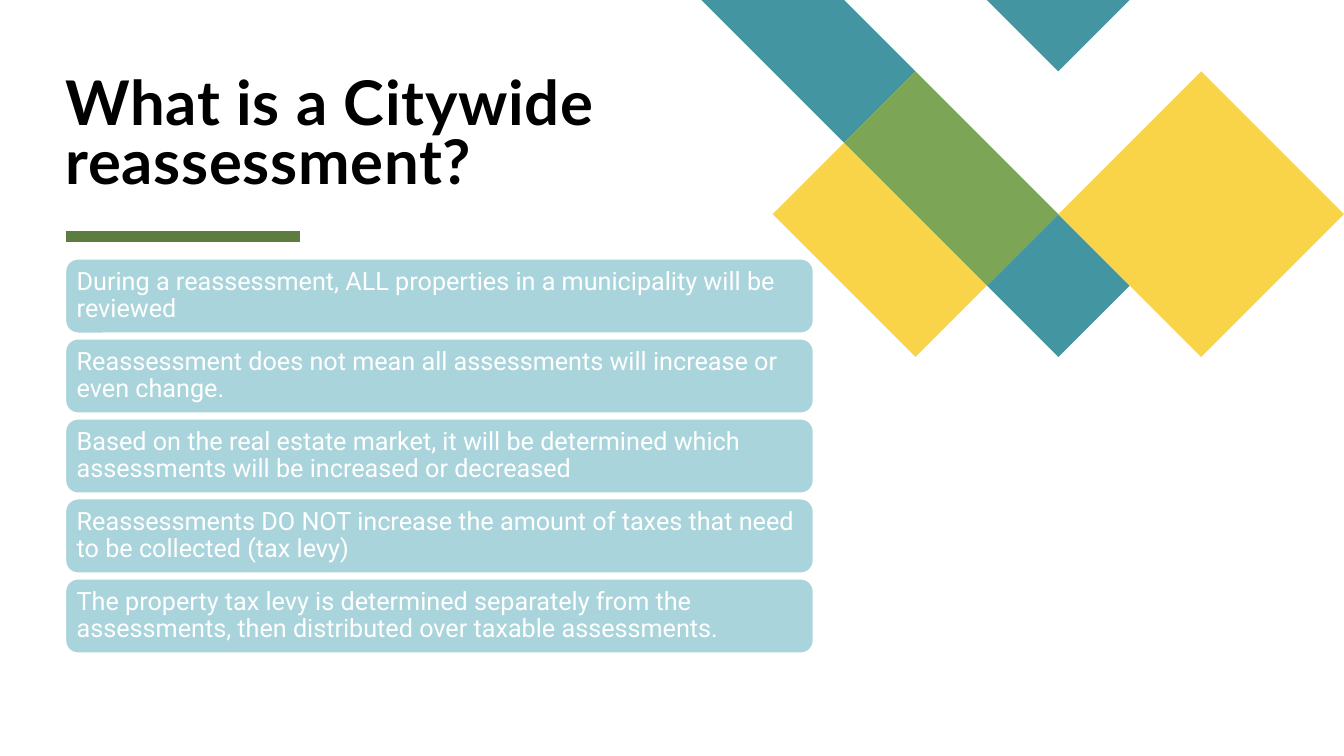
from dataclasses import dataclass

from lxml.etree import SubElement
from pptx import Presentation
from pptx.dml.color import RGBColor
from pptx.enum.shapes import MSO_CONNECTOR, MSO_SHAPE
from pptx.enum.text import MSO_ANCHOR, PP_ALIGN
from pptx.oxml.ns import qn
from pptx.shapes.base import BaseShape
from pptx.slide import Slide
from pptx.util import Pt

BLACK = RGBColor(0x00, 0x00, 0x00)
WHITE = RGBColor(0xFF, 0xFF, 0xFF)
TEAL = RGBColor(0x44, 0x95, 0xA2)
YELLOW = RGBColor(0xF9, 0xD4, 0x48)
GREEN = RGBColor(0x7C, 0xA6, 0x55)
DARK_GREEN = RGBColor(0x5D, 0x7D, 0x40)
PALE_TEAL = RGBColor(0xA9, 0xD4, 0xDB)

LATTICE_LEFT = 501
LATTICE_STEP = 51
CONTENT_LEFT = 46.8
CONTENT_WIDTH = 534.2
CARD_TOP = 184.9
CARD_HEIGHT = 53.1
CARD_PITCH = 57.13


@dataclass(frozen=True)
class Tile:
    color: RGBColor
    corners: tuple[tuple[int, int], ...]


TILES = (
    Tile(TEAL, ((0, 0), (2, 0), (3, 1), (2, 2))),
    Tile(TEAL, ((5, 3), (6, 4), (5, 5), (4, 4))),
    Tile(YELLOW, ((2, 2), (1, 3), (3, 5), (4, 4))),
    Tile(TEAL, ((4, 0), (6, 0), (5, 1))),
    Tile(GREEN, ((3, 1), (2, 2), (4, 4), (5, 3))),
    Tile(YELLOW, ((9, 3), (7, 1), (5, 3), (7, 5))),
)

STATEMENTS = (
    "During a reassessment, ALL properties in a municipality will be reviewed",
    "Reassessment does not mean all assessments will increase or even change.",
    "Based on the real estate market, it will be determined which assessments will be increased or decreased",
    "Reassessments DO NOT increase the amount of taxes that need to be collected (tax levy)",
    "The property tax levy is determined separately from the assessments, then distributed over taxable assessments.",
)


def write_text(
    shape: BaseShape,
    text: str,
    *,
    font: str,
    size: float,
    color: RGBColor,
    line_spacing: float,
    anchor: MSO_ANCHOR,
    bold: bool = False,
    tracking: float = 0,
    side_margin: float = 0,
    end_margin: float = 0,
) -> None:
    frame = shape.text_frame
    frame.word_wrap = True
    frame.vertical_anchor = anchor
    frame.margin_left = frame.margin_right = Pt(side_margin)
    frame.margin_top = frame.margin_bottom = Pt(end_margin)
    para = frame.paragraphs[0]
    para.alignment = PP_ALIGN.LEFT
    para.line_spacing = line_spacing
    span = para.add_run()
    span.text = text
    span.font.name = font
    span.font.size = Pt(size)
    span.font.bold = bold
    span.font.color.rgb = color
    if tracking:
        span.font._element.set("spc", str(round(tracking * 100)))


def draw_tile(page: Slide, tile: Tile) -> None:
    start, *others = tile.corners
    builder = page.shapes.build_freeform(*start, scale=Pt(LATTICE_STEP))
    builder.add_line_segments(others, close=True)
    shape = builder.convert_to_shape(Pt(LATTICE_LEFT), 0)
    shape.shadow.inherit = False
    shape.fill.solid()
    shape.fill.fore_color.rgb = tile.color
    shape.line.fill.background()


def draw_title(page: Slide) -> None:
    box = page.shapes.add_textbox(Pt(CONTENT_LEFT), Pt(15.1), Pt(CONTENT_WIDTH), Pt(125.3))
    write_text(
        box, "What is a Citywide reassessment?", font="Lato", size=44, color=BLACK,
        line_spacing=0.8, anchor=MSO_ANCHOR.BOTTOM, bold=True, tracking=0.5,
    )


def draw_title_rule(page: Slide) -> None:
    rule = page.shapes.add_connector(
        MSO_CONNECTOR.STRAIGHT, Pt(CONTENT_LEFT), Pt(169), Pt(214.4), Pt(169)
    )
    rule.line.color.rgb = DARK_GREEN
    rule.line.width = Pt(8)
    SubElement(rule._element.spPr, qn("a:effectLst"))


def draw_card(page: Slide, statement: str, top: float) -> None:
    card = page.shapes.add_shape(
        MSO_SHAPE.ROUNDED_RECTANGLE, Pt(CONTENT_LEFT), Pt(top), Pt(CONTENT_WIDTH), Pt(CARD_HEIGHT)
    )
    card.shadow.inherit = False
    card.fill.solid()
    card.fill.fore_color.rgb = PALE_TEAL
    card.line.color.rgb = WHITE
    card.line.width = Pt(1)
    write_text(
        card, statement, font="Roboto", size=18, color=WHITE, line_spacing=0.9,
        anchor=MSO_ANCHOR.MIDDLE, side_margin=5.4, end_margin=4,
    )


def main() -> None:
    deck = Presentation()
    deck.slide_width = Pt(960)
    deck.slide_height = Pt(540)
    page = deck.slides.add_slide(deck.slide_layouts[6])
    for tile in TILES:
        draw_tile(page, tile)
    draw_title_rule(page)
    draw_title(page)
    for row, statement in enumerate(STATEMENTS):
        draw_card(page, statement, CARD_TOP + row * CARD_PITCH)
    deck.save("out.pptx")


if __name__ == "__main__":
    main()
